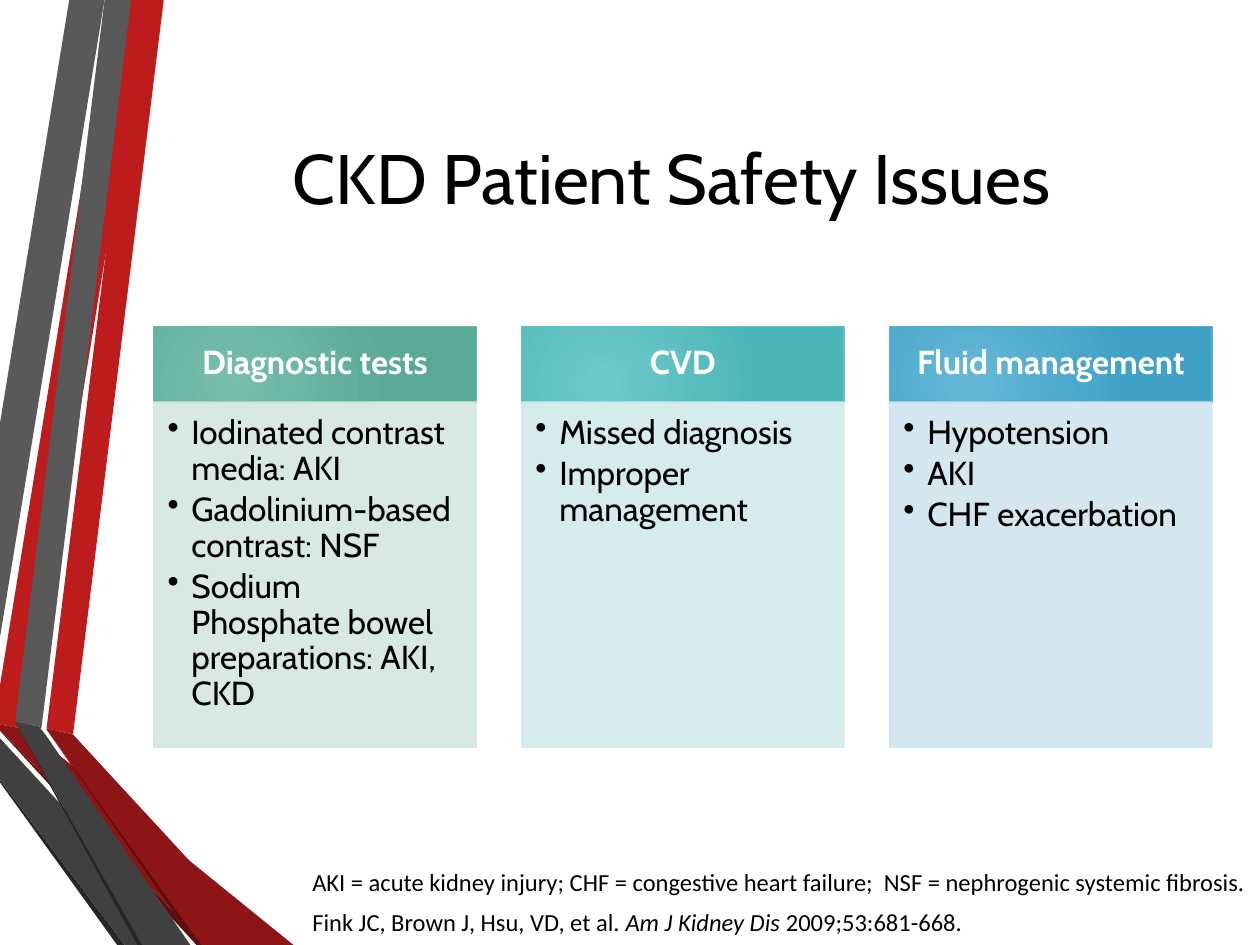
from lxml.etree import SubElement
from pptx import Presentation
from pptx.dml.color import RGBColor as RGB
from pptx.enum.shapes import MSO_SHAPE as SHAPE
from pptx.enum.text import MSO_ANCHOR as ANCHOR, MSO_AUTO_SIZE as AUTO, PP_ALIGN as ALIGN
from pptx.oxml.ns import qn
from pptx.util import Pt

PX = 9144  # EMU per px, 100 px to the inch

BLACK, WHITE = RGB(0, 0, 0), RGB(255, 255, 255)
RED, DARK_RED, DEEP_RED = RGB(0xBC, 0x1C, 0x1C), RGB(0x8D, 0x15, 0x15), RGB(0x5E, 0x0E, 0x0E)
GREY, DARK_GREY, DEEP_GREY = RGB(0x59, 0x59, 0x59), RGB(0x40, 0x40, 0x40), RGB(0x26, 0x26, 0x26)

# Ribbons on the left, back to front, in two groups
RIBBON_GROUPS = [
    [
        (RED, [(0, 544), (0, 575), (22, 579), (117, 0), (89, 0)]),
        (GREY, [(83, 0), (55, 0), (0, 336), (0, 506)]),
        (DEEP_GREY, [(0, 619), (0, 621), (93, 750), (99, 750)]),
        (DEEP_RED, [(0, 579), (0, 580), (156, 750), (163, 750)]),
        (DARK_RED, [(0, 579), (163, 750), (233, 750), (22, 579), (0, 575)]),
        (DARK_GREY, [(0, 619), (99, 750), (151, 750), (0, 586)]),
    ],
    [
        (RED, [(37, 578), (58, 583), (130, 0), (109, 0)]),
        (GREY, [(104, 0), (83, 0), (12, 573), (33, 577)]),
        (DEEP_GREY, [(12, 573), (109, 750), (113, 750)]),
        (DEEP_RED, [(37, 579), (156, 750), (160, 750)]),
        (DARK_RED, [(37, 579), (160, 750), (212, 750), (58, 583), (37, 578)]),
        (DARK_GREY, [(151, 750), (36, 583), (32, 578), (33, 577), (12, 573), (113, 750)]),
    ],
]

TITLE = "CKD Patient Safety Issues"

# Heading, items, (gradient centre, gradient edge, heading line, body colour)
COLUMNS = [
    ("Diagnostic tests",
     ["Iodinated contrast media: AKI", "Gadolinium-based contrast: NSF",
      "Sodium Phosphate bowel preparations: AKI, CKD"],
     (RGB(0x78, 0xBE, 0xAD), RGB(0x58, 0xA9, 0x96), RGB(0x68, 0xB9, 0xA6), RGB(0xD4, 0xE6, 0xE1))),
    ("CVD",
     ["Missed diagnosis", "Improper management"],
     (RGB(0x6E, 0xC9, 0xCB), RGB(0x4B, 0xB5, 0xB7), RGB(0x5C, 0xC5, 0xC7), RGB(0xD2, 0xEA, 0xEB))),
    ("Fluid management",
     ["Hypotension", "AKI", "CHF exacerbation"],
     (RGB(0x65, 0xB7, 0xD7), RGB(0x3F, 0xA1, 0xC5), RGB(0x50, 0xB1, 0xD4), RGB(0xD0, 0xE4, 0xEF))),
]
COL_LEFT, COL_TOP, COL_WIDTH, COL_STEP = 122, 259, 256, 292
HEAD_HEIGHT, BODY_HEIGHT = 60, 274

# Footnote lines as (text, italic) runs
FOOTNOTES = [
    [("AKI = acute kidney injury; CHF = congestive heart failure;  "
      "NSF = nephrogenic systemic fibrosis.", False)],
    [("Fink JC, Brown J, Hsu, VD, et al. ", False), ("Am J Kidney Dis", True),
     (" 2009;53:681-668.", False)],
]


def px(*values):
    return [v * PX for v in values]


def add_run(p, text, font, size, color, bold=False, italic=False):
    r = p.add_run()
    r.text = text
    r.font.name, r.font.size = font, Pt(size)
    r.font.bold, r.font.italic = bold, italic
    r.font.color.rgb = color


def add_ribbon(shapes, color, points):
    fb = shapes.build_freeform(*points[0], scale=PX)
    fb.add_line_segments(points[1:], close=True)
    sp = fb.convert_to_shape()
    sp.shadow.inherit = False
    sp.fill.solid()
    sp.fill.fore_color.rgb = color
    sp.line.fill.background()


def add_panel(shapes, box, line, anchor, insets):
    sp = shapes.add_shape(SHAPE.RECTANGLE, *px(*box))
    sp.shadow.inherit = False
    sp.line.color.rgb, sp.line.width = line, Pt(0.75)
    tf = sp.text_frame
    tf.word_wrap, tf.vertical_anchor = True, anchor
    tf.margin_left, tf.margin_top, tf.margin_right, tf.margin_bottom = px(*insets)
    return sp


def radial_fill(sp, centre, edge):
    sp.fill.gradient()
    for stop, color, pos in zip(sp.fill.gradient_stops, (centre, edge), (0, 1)):
        stop.color.rgb, stop.position = color, pos
    grad = sp._element.spPr.find(qn("a:gradFill"))
    grad.remove(grad.find(qn("a:lin")))
    path = SubElement(grad, qn("a:path"), path="circle")
    SubElement(path, qn("a:fillToRect"), l="50000", t="100000", r="100000", b="50000")


def add_bullet(p):
    pPr = p._p.get_or_add_pPr()
    pPr.set("marL", str(19 * PX))
    pPr.set("indent", str(-19 * PX))
    SubElement(pPr, qn("a:buChar"), char="•")


def add_column(shapes, left, heading, items, colors):
    centre, edge, line, pale = colors
    # Heading
    sp = add_panel(shapes, (left, COL_TOP, COL_WIDTH, HEAD_HEIGHT), line,
                   ANCHOR.MIDDLE, (15, 8, 15, 8))
    radial_fill(sp, centre, edge)
    p = sp.text_frame.paragraphs[0]
    p.alignment, p.line_spacing = ALIGN.CENTER, 0.9
    add_run(p, heading, "Cabin", 19, WHITE, bold=True)
    # Body, slightly transparent
    sp = add_panel(shapes, (left, COL_TOP + HEAD_HEIGHT, COL_WIDTH, BODY_HEIGHT), pale,
                   ANCHOR.TOP, (11, 11, 15, 17))
    sp.fill.solid()
    sp.fill.fore_color.rgb = pale
    for clr in sp._element.spPr.iter(qn("a:srgbClr")):
        SubElement(clr, qn("a:alpha"), val="90000")
    tf = sp.text_frame
    for i, item in enumerate(items):
        p = tf.add_paragraph() if i else tf.paragraphs[0]
        p.level, p.alignment = 1, ALIGN.LEFT
        p.line_spacing, p.space_after = 0.9, Pt(2.85)
        add_bullet(p)
        add_run(p, item, "Cabin", 19, BLACK)


def main():
    prs = Presentation()
    prs.slide_width, prs.slide_height = px(1000, 750)
    s = prs.slides.add_slide(prs.slide_layouts[5])  # Title Only

    # Ribbons
    for ribbons in RIBBON_GROUPS:
        group = s.shapes.add_group_shape()
        for color, points in ribbons:
            add_ribbon(group.shapes, color, points)

    # Title
    title = s.shapes.title
    title.left, title.top, title.width, title.height = px(122, 75, 822, 130)
    title.text_frame.vertical_anchor = ANCHOR.MIDDLE
    p = title.text_frame.paragraphs[0]
    p.alignment = ALIGN.CENTER
    add_run(p, TITLE, "Cabin", 40, BLACK)

    # Columns
    group = s.shapes.add_group_shape()
    for i, column in enumerate(COLUMNS):
        add_column(group.shapes, COL_LEFT + i * COL_STEP, *column)

    # Footnotes
    tf = s.shapes.add_textbox(*px(238, 683, 762, 66)).text_frame
    tf.word_wrap, tf.auto_size = True, AUTO.SHAPE_TO_FIT_TEXT
    for i, runs in enumerate(FOOTNOTES):
        p = tf.add_paragraph() if i else tf.paragraphs[0]
        p.space_after = Pt(6)
        for text, italic in runs:
            add_run(p, text, "Calibri", 14, BLACK, italic=italic)

    prs.save("out.pptx")


if __name__ == "__main__":
    main()
